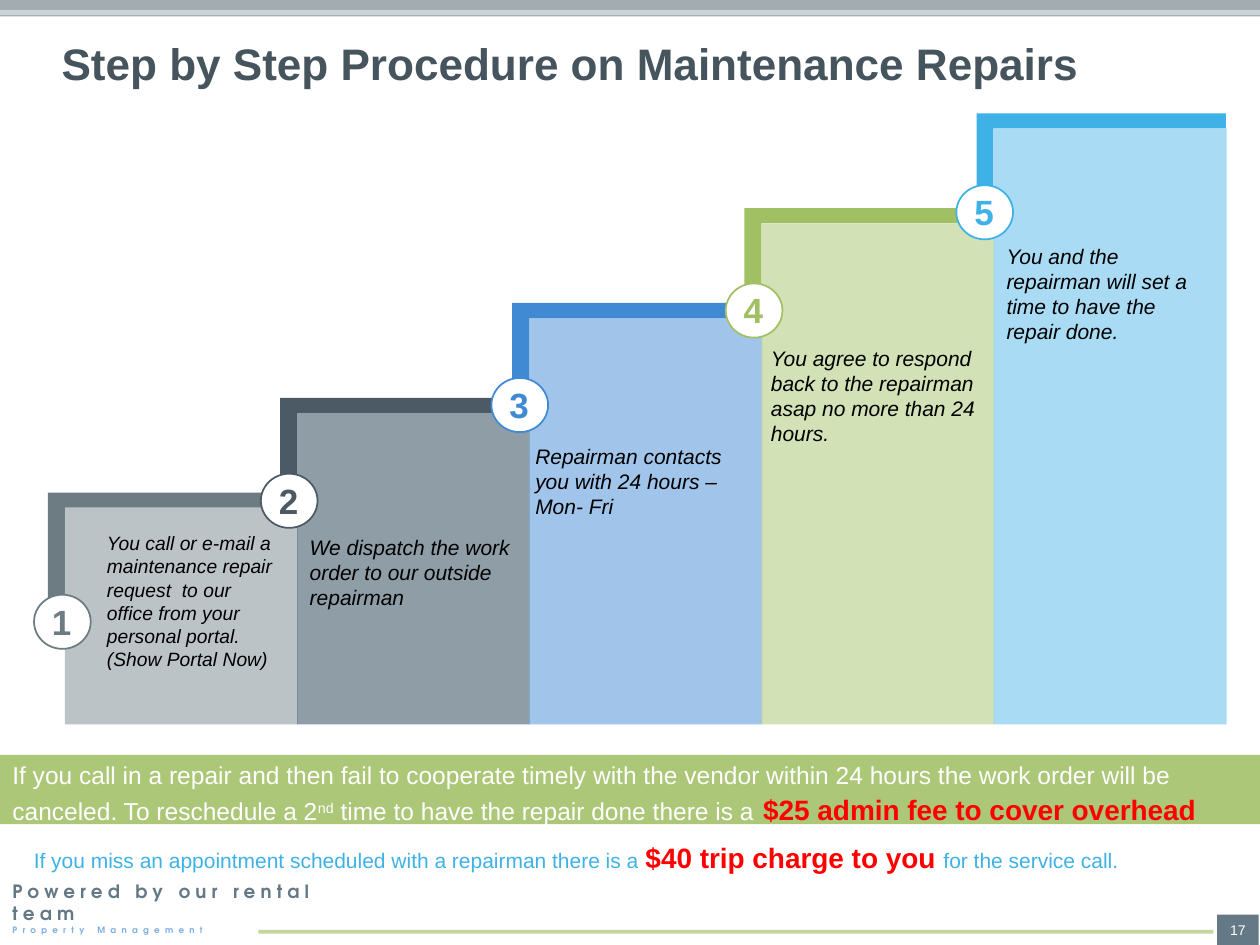
from pptx import Presentation, util as u
from pptx.dml.color import RGBColor
from pptx.enum import shapes, text
from pptx.oxml.ns import qn
from lxml import etree

KIND = shapes.MSO_SHAPE
PITCH, RISE = 1.8425, 0.7525
LEG, BAR = 0.135, 0.12
FLOOR = 5.75

STEPS = [
    ("6C7C82", "A1ADB1", (0.27, 4.72), (0.75, 4.17, 1.55, 1.21), 11,
     ["You call or e-mail a maintenance repair request  to our office from your personal portal.",
      "(Show Portal Now)"]),
    ("4B5A65", "647886", (2.07, 3.76), (2.36, 4.19, 1.82, 0.71), 12,
     ["We dispatch the work order to our outside repairman"]),
    ("408AD4", "7DAFE2", (3.9, 3), (4.15, 3.47, 1.9, 0.71), 12,
     ["Repairman contacts you with 24 hours – Mon- Fri"]),
    ("A1C064", "C3D69B", (5.76, 2.25), (6.02, 2.69, 1.86, 0.91), 12,
     ["You agree to respond back to the repairman asap no more than 24 hours."]),
    ("3EB2E6", "89CFF0", (7.59, 1.47), (7.89, 1.88, 1.83, 0.91), 12,
     ["You and the repairman will set a time to have the repair done."]),
]


def paint(fill, color, alpha=None):
    """Fill with a hex colour and an optional opacity in percent."""
    fill.solid()
    fill.fore_color.rgb = RGBColor.from_string(color)
    if alpha:
        tone = fill._xPr.find(qn("a:solidFill"))[0]
        etree.SubElement(tone, qn("a:alpha"), val=str(alpha * 1000))


def block(slide, box, color, alpha=None, kind=KIND.RECTANGLE, line=None):
    """Add a flat preset shape."""
    shape = slide.shapes.add_shape(kind, *map(u.Inches, box))
    shape.shadow.inherit = False
    paint(shape.fill, color, alpha)
    if line:
        paint(shape.line.fill, line)
        shape.line.width = u.Pt(1)
    else:
        shape.line.fill.background()


def say(slide, box, paras, mid=False, center=False, inset=True, lead=None, **base):
    """Add a text box; each paragraph is a string or a list of (text, format) runs."""
    frame = slide.shapes.add_textbox(*map(u.Inches, box)).text_frame
    frame.word_wrap = True
    if mid:
        frame.vertical_anchor = text.MSO_ANCHOR.MIDDLE
    if not inset:
        frame.margin_left = frame.margin_right = 0
        frame.margin_top = frame.margin_bottom = 0
    for i, para in enumerate(paras):
        p = frame.paragraphs[0] if i == 0 else frame.add_paragraph()
        if center:
            p.alignment = text.PP_ALIGN.CENTER
        if lead:
            p.line_spacing = lead
        for words, extra in [(para, {})] if isinstance(para, str) else para:
            style(p.add_run(), words, **{**base, **extra})


def style(run, words, size=12, color="000000", bold=False, italic=False,
          face="Arial", gap=0, lift=0):
    """Give a run its words and format."""
    run.text = words
    font = run.font
    font.size, font.name, font.bold, font.italic = u.Pt(size), face, bold, italic
    paint(font.fill, color)
    props = run._r.get_or_add_rPr()
    if gap:
        props.set("spc", str(gap * 100))
    if lift:
        props.set("baseline", str(lift * 1000))


def corner(slide, x, y, w, h, color):
    """Draw the angled frame along the top and left of a step."""
    pts = [(x + w, y), (x + w, y + BAR), (x + LEG, y + BAR),
           (x + LEG, y + h), (x, y + h)]
    path = slide.shapes.build_freeform(u.Inches(x), u.Inches(y))
    path.add_line_segments([(u.Inches(a), u.Inches(b)) for a, b in pts])
    shape = path.convert_to_shape()
    shape.shadow.inherit = False
    paint(shape.fill, color)
    shape.line.fill.background()


def stairs(slide, left, top):
    """Draw the rising steps from the top left of the first one."""
    for i, (dark, pale, spot, box, size, words) in enumerate(STEPS):
        x, y = left + PITCH * i, top - RISE * i
        corner(slide, x, y, 1.98, 0.87, dark)
        block(slide, (x + LEG, y + BAR, 1.85, FLOOR - y - BAR), pale, alpha=72)
        bx, by = spot
        block(slide, (bx, by, 0.45, 0.43), "FFFFFF", kind=KIND.OVAL, line=dark)
        say(slide, (bx - 0.02, by + 0.06, 0.48, 0.3), [str(i + 1)], mid=True,
            center=True, inset=False, size=20, color=dark, bold=True)
        say(slide, box, words, size=size, italic=True)


def header(slide, x, y, w, h):
    """Draw the top bands and the title."""
    block(slide, (0, 0, 10, 0.13), "A1ADB1")
    block(slide, (0, 0.08, 10, 0.04), "CAD3D5")
    say(slide, (x, y, w, h), ["Step by Step Procedure on Maintenance Repairs"],
        mid=True, lead=0.9, size=25.2, color="46545E", bold=True)


def fees(slide, x, y, w, h):
    """Draw the green fee band and the trip charge line under it."""
    alert = dict(size=16, color="FF0000", bold=True)
    block(slide, (x, y, w, h), "A5C26A", alpha=90)
    say(slide, (x, y - 0.01, w, 0.64), [[
        ("If you call in a repair and then fail to cooperate timely with the vendor "
         "within 24 hours the work order will be canceled. To reschedule a 2", {}),
        ("nd", dict(lift=30)),
        (" time to have the repair done there is a", {}),
        (" ", dict(size=18)),
        ("$25 admin fee to cover overhead", alert),
    ]], size=14, color="FFFFFF")
    say(slide, (x + 0.17, y + 0.63, 9.55, 0.37), [[
        ("If you miss an appointment scheduled with a repairman there is a ", {}),
        ("$40 trip charge to you ", alert),
        ("for the service call.", {}),
    ]], size=12, color="3EB2E6")


def footer(slide, x, y, w, h):
    """Draw the credit, the rule and the page number."""
    block(slide, (x + 2.05, 7.38, 7.58, 0.03), "C3D69B")
    say(slide, (x, y, 2.61, h), [
        "Powered by our rental team",
        [("Property Management", dict(size=5, color="7DAFE2"))],
    ], size=10.5, color="647886", bold=True, face="TeX Gyre Adventor", gap=3)
    block(slide, (x + w - 0.34, 7.26, 0.33, 0.24), "647886")
    say(slide, (x + w - 0.35, 7.26, 0.35, 0.24), ["17"], mid=True, center=True,
        size=8, color="FFFFFF")


def main():
    """Build and save the slide."""
    deck = Presentation()
    deck.slide_width, deck.slide_height = u.Inches(10), u.Inches(7.5)
    slide = deck.slides.add_slide(deck.slide_layouts[6])
    header(slide, 0.39, 0.17, 8.28, 0.71)
    footer(slide, 0, 6.94, 10, 0.56)
    stairs(slide, 0.38, 3.91)
    fees(slide, 0, 5.99, 10, 0.55)
    deck.save("out.pptx")


if __name__ == "__main__":
    main()
